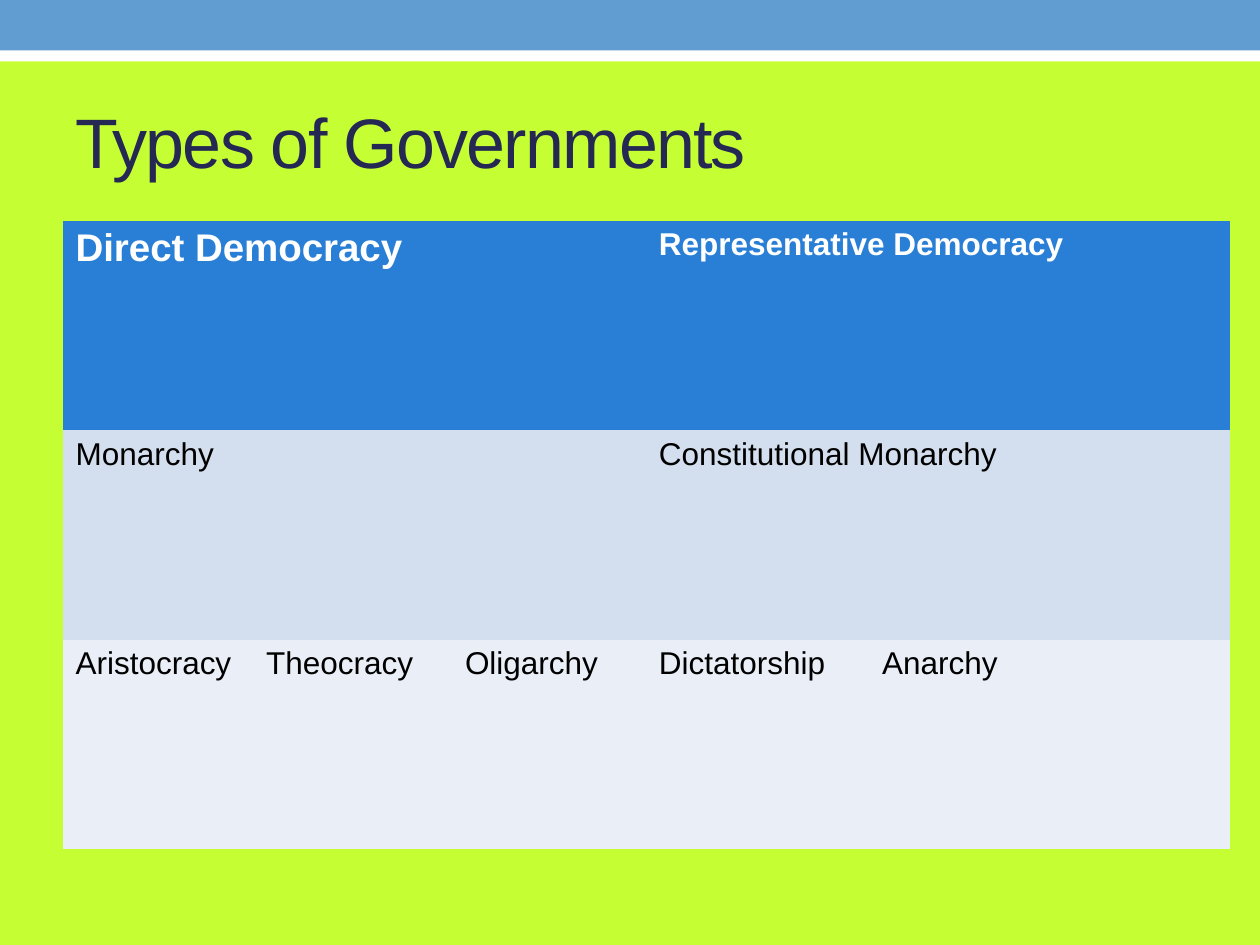
from pptx import Presentation
from pptx.dml.color import RGBColor
from pptx.enum.shapes import MSO_SHAPE
from pptx.enum.text import MSO_ANCHOR
from pptx.util import Cm, Pt

FONT = "Arial"
NO_GRID_STYLE = "{2D5ABB26-0587-4C30-8999-92F81FD0307C}"
COLUMN_WIDTHS = [3.84, 4.01, 3.91, 4.5, 7.27]
HEADER = {"size": Pt(18), "bold": True}
BODY = {"size": Pt(18), "bold": False}
ROWS = [
    ("297FD5", "FFFFFF", HEADER, [("Direct Democracy", 3), ("Representative Democracy", 2)]),
    ("D3DFEE", "000000", BODY, [("Monarchy", 3), ("Constitutional Monarchy", 2)]),
    ("EAEFF7", "000000", BODY, [("Aristocracy", 1), ("Theocracy", 1), ("Oligarchy", 1),
                                ("Dictatorship", 1), ("Anarchy", 1)]),
]


def paint(fill, color):
    fill.solid()
    fill.fore_color.rgb = RGBColor.from_string(color)


def write(frame, text, color, formats):
    span = frame.paragraphs[0].add_run()
    span.text = text
    for name, value in {"name": FONT, **formats}.items():
        setattr(span.font, name, value)
    paint(span.font.fill, color)
    return span


def add_top_bands(page, left, top, width, height):
    for offset, share, color in [(0.5, 0.5, "FFFFFF"), (0, 0.82, "629DD1")]:
        band = page.shapes.add_shape(MSO_SHAPE.RECTANGLE, Cm(left), Cm(top + offset * height),
                                     Cm(width), Cm(share * height))
        band.shadow.inherit = False
        band.line.fill.background()
        paint(band.fill, color)


def add_title(page, left, top, width, height):
    frame = page.shapes.add_textbox(Cm(left), Cm(top), Cm(width), Cm(height)).text_frame
    for name, value in {"word_wrap": True, "vertical_anchor": MSO_ANCHOR.MIDDLE}.items():
        setattr(frame, name, value)
    span = write(frame, "Types of Governments", "242852", {"size": Pt(40)})
    span.font._element.set("spc", "-100")


def add_government_table(page, left, top, width, height):
    table = page.shapes.add_table(len(ROWS), len(COLUMN_WIDTHS), Cm(left), Cm(top),
                                  Cm(width), Cm(height)).table
    table._tbl.tblPr[0].text = NO_GRID_STYLE
    for name in ("first_row", "horz_banding"):
        setattr(table, name, False)
    for column, share in zip(table.columns, COLUMN_WIDTHS):
        column.width = Cm(width * share / sum(COLUMN_WIDTHS))
    for row, (fill, color, formats, entries) in enumerate(ROWS):
        table.rows[row].height = Cm(height / len(ROWS))
        column = 0
        for text, columns in entries:
            cell = table.cell(row, column)
            if columns > 1:
                cell.merge(table.cell(row, column + columns - 1))
            paint(cell.fill, fill)
            size = Pt(22) if (row, column) == (0, 0) else formats["size"]
            write(cell.text_frame, text, color, {**formats, "size": size})
            column += columns


def main():
    deck = Presentation()
    deck.slide_width, deck.slide_height = Cm(25.4), Cm(19.05)
    page = deck.slides.add_slide(deck.slide_layouts[6])
    paint(page.background.fill, "C5FF33")
    add_top_bands(page, 0, 0, 25.4, 1.24)
    add_title(page, 1.27, 1.47, 22.86, 2.74)
    add_government_table(page, 1.27, 4.45, 23.53, 12.67)
    deck.save("out.pptx")


if __name__ == "__main__":
    main()
